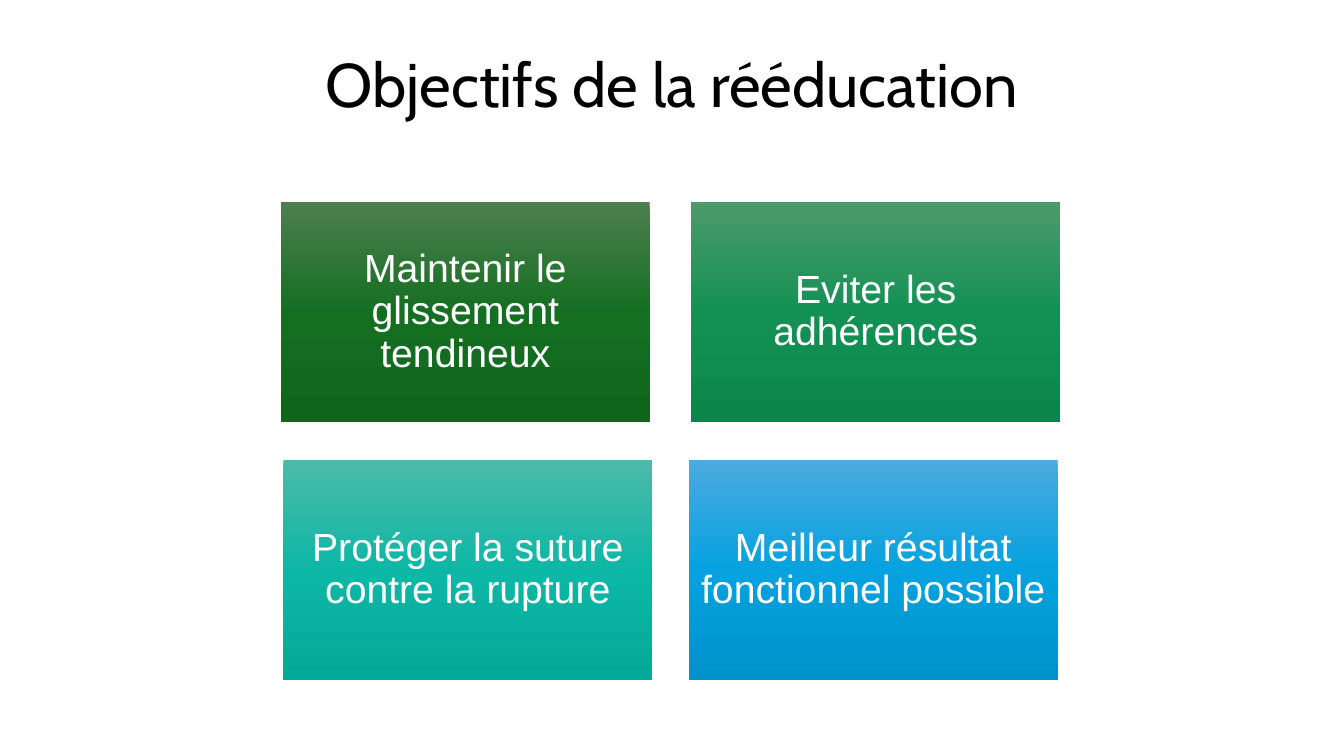
"""Build the slide on the goals of rehabilitation."""
from copy import deepcopy

from pptx import Presentation
from pptx.dml.color import RGBColor
from pptx.enum.shapes import MSO_SHAPE
from pptx.enum.text import MSO_ANCHOR, PP_ALIGN
from pptx.oxml.ns import qn
from pptx.util import Inches, Pt

RECTANGLE = MSO_SHAPE.RECTANGLE
MIDDLE = MSO_ANCHOR.MIDDLE
CENTER = PP_ALIGN.CENTER
WHITE = RGBColor(0xFF, 0xFF, 0xFF)
BLACK = RGBColor(0x00, 0x00, 0x00)
FOREST = (RGBColor(0x4D, 0x7E, 0x50), RGBColor(0x15, 0x6F, 0x21), RGBColor(0x0F, 0x66, 0x1B))
GREEN = (RGBColor(0x4D, 0x9A, 0x6B), RGBColor(0x13, 0x91, 0x54), RGBColor(0x0B, 0x86, 0x4B))
TEAL = (RGBColor(0x4C, 0xBA, 0xAB), RGBColor(0x0D, 0xB7, 0xA5), RGBColor(0x05, 0xA9, 0x98))
BLUE = (RGBColor(0x4C, 0xAA, 0xDF), RGBColor(0x05, 0xA2, 0xDF), RGBColor(0x00, 0x92, 0xCB))

TITLE = "Objectifs de la rééducation"
GOAL_ROWS = [
    (2.00, 0.41, [("Maintenir le glissement tendineux", FOREST),
                  ("Eviter les adhérences", GREEN)]),
    (4.56, 0.36, [("Protéger la suture contre la rupture", TEAL),
                  ("Meilleur résultat fonctionnel possible", BLUE)]),
]
CARD_WIDTH, CARD_HEIGHT = 3.66, 2.19
CARDS_CENTER = 6.65
STOP_POSITIONS = (0, 0.5, 1)


def write(shape, text, *, font, size, color, inset):
    frame = shape.text_frame
    frame.word_wrap = True
    frame.vertical_anchor = MIDDLE
    frame.margin_left = frame.margin_right = Inches(inset)
    frame.margin_top = frame.margin_bottom = Inches(inset)
    paragraph = frame.paragraphs[0]
    paragraph.alignment = CENTER
    paragraph.line_spacing = 0.9
    run = paragraph.add_run()
    run.text = text
    run.font.name = font
    run.font.size = Pt(size)
    run.font.color.rgb = color


def shade(shape, colors):
    shape.fill.gradient()
    shape.fill.gradient_angle = 270
    stops = shape.fill._xPr.find(".//" + qn("a:gsLst"))
    stops.append(deepcopy(stops[-1]))
    for stop, position, color in zip(shape.fill.gradient_stops, STOP_POSITIONS, colors):
        stop.position = position
        stop.color.rgb = color


def main():
    deck = Presentation()
    deck.slide_width, deck.slide_height = Inches(13.33), Inches(7.5)
    slide = deck.slides.add_slide(deck.slide_layouts[6])

    for top, gap, goals in GOAL_ROWS:
        row_left = CARDS_CENTER - gap / 2 - CARD_WIDTH
        for column, (goal, colors) in enumerate(goals):
            left = row_left + column * (CARD_WIDTH + gap)
            card = slide.shapes.add_shape(RECTANGLE, Inches(left), Inches(top),
                                          Inches(CARD_WIDTH), Inches(CARD_HEIGHT))
            card.shadow.inherit = False
            card.line.fill.background()
            shade(card, colors)
            write(card, goal, font="Arial", size=28, color=WHITE, inset=0.12)

    heading = slide.shapes.add_textbox(Inches(0.95), Inches(0.27), Inches(11.43), Inches(1.2))
    write(heading, TITLE, font="Cabin", size=44, color=BLACK, inset=0.18)
    deck.save("out.pptx")


if __name__ == "__main__":
    main()
